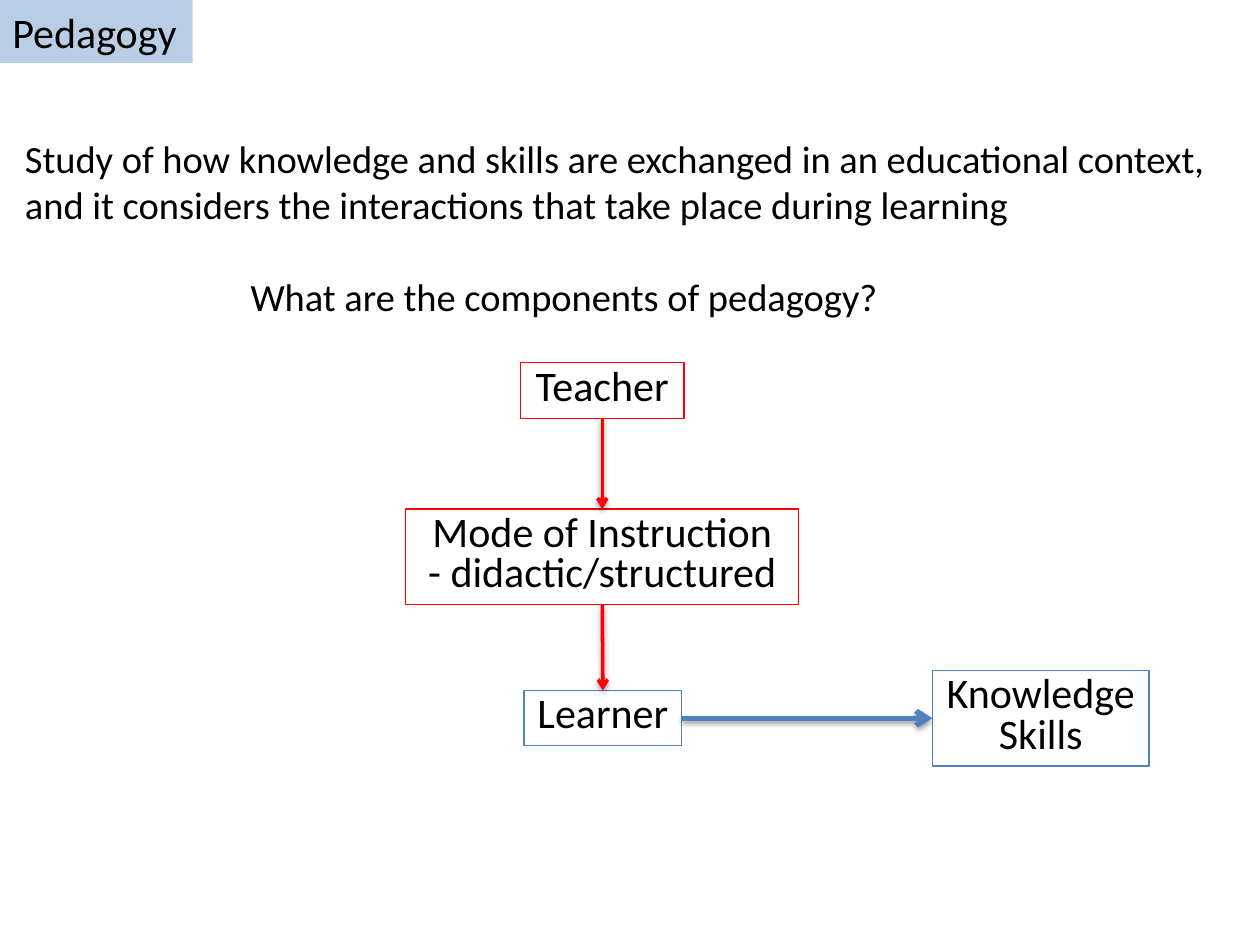
from lxml import etree
from pptx import Presentation
from pptx.dml.color import RGBColor
from pptx.enum.shapes import MSO_CONNECTOR, MSO_SHAPE
from pptx.enum.text import MSO_ANCHOR, MSO_AUTO_SIZE, PP_ALIGN
from pptx.oxml import parse_xml
from pptx.oxml.ns import qn
from pptx.util import Inches, Pt

RECT = MSO_SHAPE.RECTANGLE
STRAIGHT = MSO_CONNECTOR.STRAIGHT
TOP = MSO_ANCHOR.TOP
FIT_SHAPE = MSO_AUTO_SIZE.SHAPE_TO_FIT_TEXT
LEFT, CENTER = PP_ALIGN.LEFT, PP_ALIGN.CENTER

FONT = "Calibri"
BLACK, RED, BLUE, PALE_BLUE = "000000", "FF0000", "4F81BD", "B9CDE5"
TOP_SITE, LEFT_SITE, BOTTOM_SITE, RIGHT_SITE = range(4)

SHADOW = (
    '<a:effectLst xmlns:a="http://schemas.openxmlformats.org/drawingml/2006/main">'
    '<a:outerShdw blurRad="40000" dist="20000" dir="5400000" rotWithShape="0">'
    '<a:srgbClr val="000000"><a:alpha val="38000"/></a:srgbClr>'
    '</a:outerShdw></a:effectLst>'
)


def rgb(color):
    return RGBColor.from_string(color)


def set_text(sp, text, size, wrap, align=LEFT, spacing=None):
    tf = sp.text_frame
    tf.text = text
    tf.word_wrap = wrap
    tf.auto_size = FIT_SHAPE
    tf.vertical_anchor = TOP
    for p in tf.paragraphs:
        p.alignment = align
        p.line_spacing = spacing
        for r in p.runs:
            r.font.name = FONT
            r.font.size = Pt(size)
            r.font.color.rgb = rgb(BLACK)


def add_rect(slide, left, top, width, height):
    sp = slide.shapes.add_shape(
        RECT, Inches(left), Inches(top), Inches(width), Inches(height))
    sp.shadow.inherit = False
    return sp


def add_heading(slide, text, left, top, width, height):
    sp = add_rect(slide, left, top, width, height)
    sp.fill.solid()
    sp.fill.fore_color.rgb = rgb(PALE_BLUE)
    sp.line.fill.background()
    set_text(sp, text, 24, wrap=False)


def add_component(slide, text, left, top, width, height, color, wrap=False):
    sp = add_rect(slide, left, top, width, height)
    sp.fill.background()
    sp.line.color.rgb = rgb(color)
    sp.line.width = Pt(0.75)
    set_text(sp, text, 24, wrap, CENTER, 0.8)
    return sp


def add_arrow(slide, start, start_site, end, end_site, color, width):
    line = slide.shapes.add_connector(STRAIGHT, 0, 0, 0, 0)
    line.begin_connect(start, start_site)
    line.end_connect(end, end_site)
    line.line.color.rgb = rgb(color)
    line.line.width = Pt(width)
    etree.SubElement(line.line._get_or_add_ln(), qn("a:tailEnd"), type="arrow")
    line._element.spPr.append(parse_xml(SHADOW))


def add_text(slide, text, left, top, width, height, wrap):
    sp = slide.shapes.add_textbox(
        Inches(left), Inches(top), Inches(width), Inches(height))
    set_text(sp, text, 22, wrap)


def main():
    prs = Presentation()
    prs.slide_width, prs.slide_height = Inches(10), Inches(7.5)
    slide = prs.slides.add_slide(prs.slide_layouts[6])

    add_heading(slide, "Pedagogy", 0, 0, 1.53, 0.5)
    learner = add_component(slide, "Learner", 4.16, 5.48, 1.25, 0.44, BLUE)
    teacher = add_component(slide, "Teacher", 4.13, 2.88, 1.3, 0.44, RED)
    mode = add_component(slide, "Mode of Instruction\n- didactic/structured",
                         3.22, 4.04, 3.12, 0.76, RED, wrap=True)
    outcome = add_component(slide, "Knowledge\nSkills", 7.4, 5.32, 1.72, 0.76, BLUE)

    add_arrow(slide, learner, RIGHT_SITE, outcome, LEFT_SITE, BLUE, 3)
    add_arrow(slide, teacher, BOTTOM_SITE, mode, TOP_SITE, RED, 2)
    add_arrow(slide, mode, BOTTOM_SITE, learner, TOP_SITE, RED, 2)

    add_text(slide, "Study of how knowledge and skills are exchanged in an "
             "educational context, and it considers the interactions that take "
             "place during learning", 0.1, 1.02, 9.87, 0.84, wrap=True)
    add_text(slide, "What are the components of pedagogy?",
             1.89, 2.12, 5.25, 0.47, wrap=False)
    prs.save("out.pptx")


if __name__ == "__main__":
    main()
